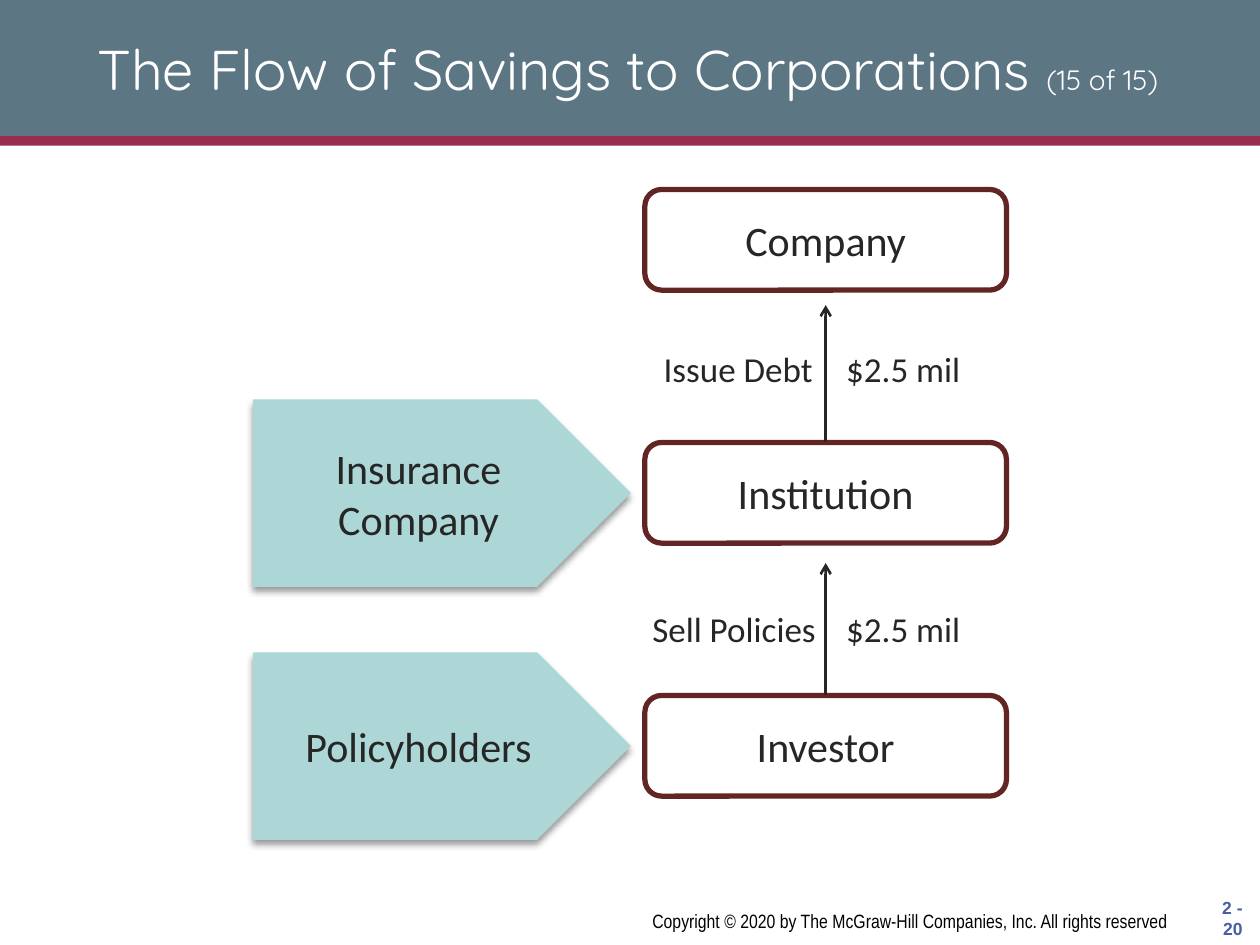
from lxml import etree
from pptx import Presentation
from pptx.dml.color import RGBColor
from pptx.enum.shapes import MSO_CONNECTOR, MSO_SHAPE
from pptx.enum.text import MSO_ANCHOR, PP_ALIGN
from pptx.oxml.ns import qn
from pptx.util import Cm, Pt

RECT, ROUND = MSO_SHAPE.RECTANGLE, MSO_SHAPE.ROUNDED_RECTANGLE
PENTAGON, STRAIGHT = MSO_SHAPE.PENTAGON, MSO_CONNECTOR.STRAIGHT
TOP, MIDDLE = MSO_ANCHOR.TOP, MSO_ANCHOR.MIDDLE
LEFT, CENTER, RIGHT = PP_ALIGN.LEFT, PP_ALIGN.CENTER, PP_ALIGN.RIGHT

COLORS = {"slate": "5C7683", "crimson": "992D4F", "teal": "ADD7D6",
          "maroon": "632523", "ink": "262626", "white": "FFFFFF",
          "black": "000000", "blue": "455EA0"}
RGB = {name: RGBColor.from_string(value) for name, value in COLORS.items()}


def add_text(sp, runs, color="ink", font="Calibri", align=CENTER,
             anchor=MIDDLE, wrap=True, bold=False):
    """Fill a shape with one paragraph of (text, size) runs."""
    tf = sp.text_frame
    tf.word_wrap, tf.vertical_anchor = wrap, anchor
    p = tf.paragraphs[0]
    p.alignment = align
    for text, size in runs:
        r = p.add_run()
        r.text = text
        look = {"name": font, "size": Pt(size), "bold": bold}
        for key, value in look.items():
            setattr(r.font, key, value)
        r.font.color.rgb = RGB[color]


def add_box(kind, x, y, w, h, fill=None, line=None):
    """Draw a preset shape, measured in centimetres."""
    sp = s.shapes.add_shape(kind, Cm(x), Cm(y), Cm(w), Cm(h))
    sp.shadow.inherit = False
    if fill:
        sp.fill.solid()
        sp.fill.fore_color.rgb = RGB[fill]
    else:
        sp.fill.background()
    if line:
        sp.line.color.rgb, sp.line.width = RGB[line], Pt(3)
    else:
        sp.line.fill.background()
    return sp


prs = Presentation()
prs.slide_width, prs.slide_height = Cm(25.4), Cm(19.05)
s = prs.slides.add_slide(prs.slide_layouts[6])

# Header band
add_box(RECT, 0, 2.74, 25.4, 0.2, "crimson")
add_box(RECT, 0, 0, 25.4, 2.74, "slate")

# Title, page number and copyright line
sp = s.shapes.add_textbox(Cm(0.64), Cm(0.2), Cm(24.03), Cm(2.34))
add_text(sp, [("The Flow of Savings to Corporations ", 32), ("(15 of 15)", 16)],
         "white", "Quicksand")
sp = s.shapes.add_textbox(Cm(24.03), Cm(17.98), Cm(1.27), Cm(1.07))
add_text(sp, [("2 - 20", 10)], "blue", "Arial", RIGHT, wrap=False, bold=True)
sp = s.shapes.add_textbox(Cm(9.09), Cm(18.21), Cm(14.71), Cm(0.74))
add_text(sp, [("Copyright © 2020 by The McGraw-Hill Companies, Inc. "
               "All rights reserved", 11)],
         "black", "Arial Narrow", RIGHT, TOP)

# Three levels, evenly spaced
BOX_X, BOX_Y, BOX_W, BOX_H, PITCH = 13, 3.82, 7.29, 2.03, 5.1
axis = BOX_X + BOX_W / 2
levels = [BOX_Y + i * PITCH for i in range(3)]

# Pentagons pointing at the lower two levels
for y, label in zip(levels[1:], ["Insurance Company", "Policyholders"]):
    sp = add_box(PENTAGON, 5.1, y - 0.87, 7.62, 3.78, "teal")
    add_text(sp, [(label, 24)])
    effects = sp._element.spPr.find(qn("a:effectLst"))
    shadow = etree.SubElement(effects, qn("a:outerShdw"), blurRad=str(Pt(4)),
                              dist=str(Pt(3)), dir="5400000", rotWithShape="0")
    color = etree.SubElement(shadow, qn("a:srgbClr"), val=COLORS["black"])
    etree.SubElement(color, qn("a:alpha"), val="40000")

# Outlined boxes
for y, label in zip(levels, ["Company", "Institution", "Investor"]):
    sp = add_box(ROUND, BOX_X, y, BOX_W, BOX_H, line="maroon")
    add_text(sp, [(label, 24)])

# Upward arrows with a label on each side
flows = [(levels[1], 6.15, 6.88, "Issue Debt", 13.13),
         (levels[2], 11.35, 12.12, "Sell Policies", 12.9)]
for start, tip, label_y, label, label_x in flows:
    cx = s.shapes.add_connector(STRAIGHT, Cm(axis), Cm(start), Cm(axis), Cm(tip))
    cx.line.color.rgb, cx.line.width = RGB["ink"], Pt(1.5)
    etree.SubElement(cx.line._get_or_add_ln(), qn("a:tailEnd"), type="arrow")
    etree.SubElement(cx._element.spPr, qn("a:effectLst"))
    for text, x, w in [(label, label_x, 4.06), ("$2.5 mil", 16.81, 3.05)]:
        sp = s.shapes.add_textbox(Cm(x), Cm(label_y), Cm(w), Cm(1.27))
        add_text(sp, [(text, 20)], align=LEFT, anchor=TOP)

prs.save("out.pptx")
